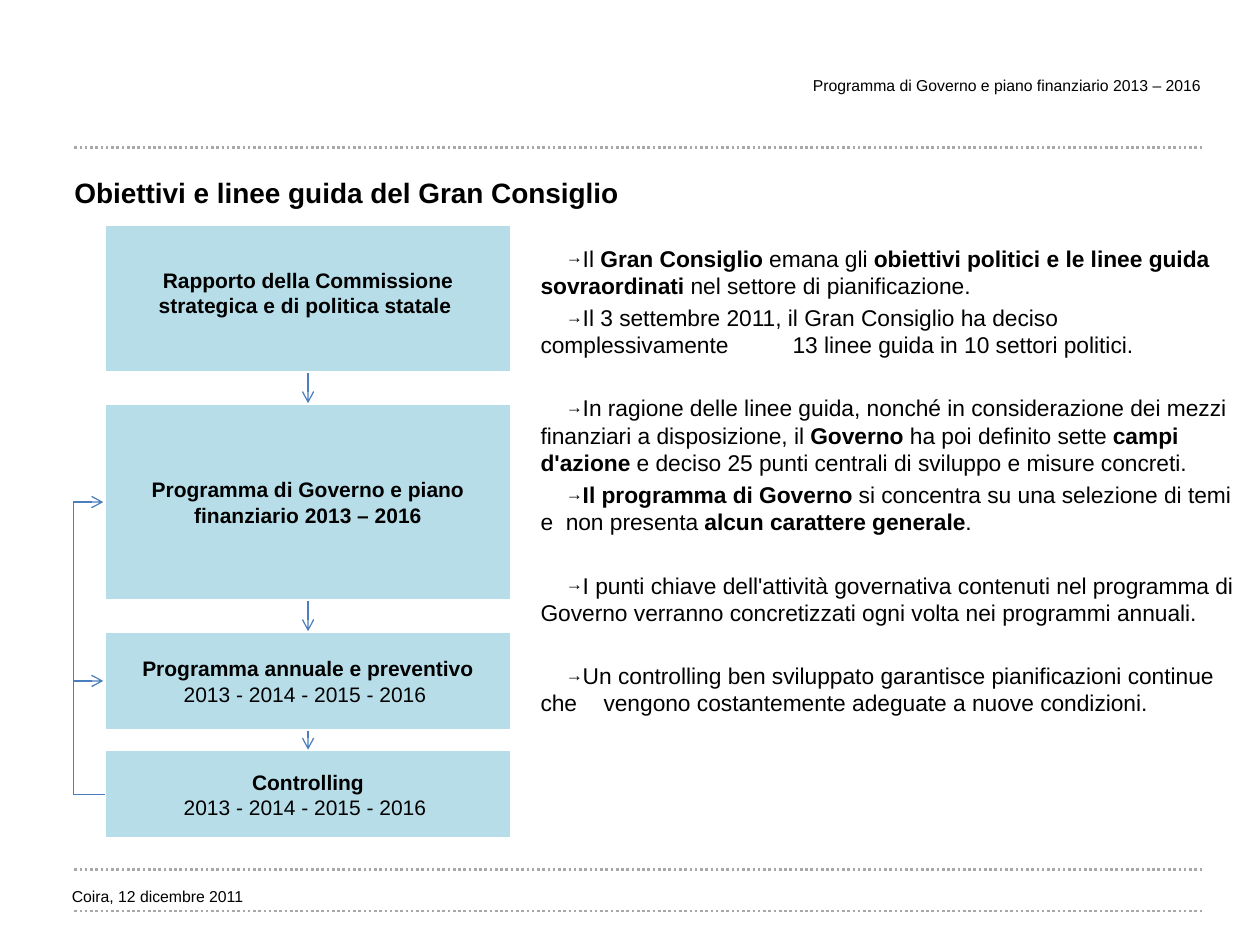
import pptx
import pptx.util
from pptx.dml.color import RGBColor
from pptx.enum.dml import MSO_LINE
from pptx.enum.shapes import MSO_CONNECTOR, MSO_SHAPE
from pptx.enum.text import MSO_ANCHOR, PP_ALIGN
from pptx.oxml.ns import qn
from lxml import etree

Pt, Inch = pptx.util.Pt, pptx.util.Inches

BLACK = RGBColor(0, 0, 0)
WHITE = RGBColor(255, 255, 255)
GREY = RGBColor(0xA7, 0xA8, 0xAA)
AQUA = RGBColor(0xB7, 0xDE, 0xE8)
BLUE = RGBColor(0x4B, 0x7E, 0xBC)

# Grid of the page and of the flow chart
LEFT, RIGHT = 0.59, 9.54
COL, WIDE = 0.83, 3.23
MID = COL + WIDE / 2
LOOP = 0.25
YEARS = "2013 - 2014 - 2015 - 2016 "
PLAN = "Programma di Governo e piano finanziario 2013 – 2016"

# Top, height, bottom inset, and lines of each step; ** marks bold
STEPS = [
    (1.78, 1.18, 0.14, ["**Rapporto della Commissione strategica e di politica statale "]),
    (3.2, 1.57, 0.05, ["**" + PLAN]),
    (5.01, 0.79, 0.05, ["**Programma annuale e preventivo", YEARS]),
    (5.95, 0.71, 0.05, ["**Controlling", YEARS]),
]

# Groups of remarks, one group beside each step
NOTES = [
    ["Il **Gran Consiglio **emana gli **obiettivi politici e le linee guida "
     "\tsovraordinati** nel settore di pianificazione.",
     "Il 3 settembre 2011, il Gran Consiglio ha deciso complessivamente "
     "\t13 linee guida in 10 settori politici."],
    ["In ragione delle linee guida, nonché in considerazione dei mezzi "
     "\tfinanziari a disposizione, il **Governo** ha poi definito sette "
     "**campi \td'azione** e deciso 25 punti centrali di sviluppo e misure concreti.",
     "**Il programma di Governo** si concentra su una selezione di temi e "
     "\tnon presenta **alcun carattere generale**."],
    ["I punti chiave dell'attività governativa contenuti nel programma di "
     "\tGoverno verranno concretizzati ogni volta nei programmi annuali."],
    ["Un controlling ben sviluppato garantisce pianificazioni continue che "
     "\tvengono costantemente adeguate a nuove condizioni."],
]


def style(obj, **vals):
    for key, val in vals.items():
        setattr(obj, key, val)


def frame(shape, **vals):
    """Set up a text frame without margins unless told otherwise."""
    base = dict(word_wrap=True, vertical_anchor=MSO_ANCHOR.TOP, margin_left=0,
                margin_right=0, margin_top=0, margin_bottom=0)
    style(shape.text_frame, **{**base, **vals})
    return shape.text_frame


def write(para, text, size, align=PP_ALIGN.LEFT):
    """Fill a paragraph; every ** switches bold on or off."""
    para.alignment = align
    for i, part in enumerate(text.split("**")):
        if part:
            run = para.add_run()
            run.text = part
            style(run.font, name="Arial", size=Pt(size), bold=i % 2 == 1)
            run.font.color.rgb = BLACK


def label(slide, box, text, size, align=PP_ALIGN.LEFT):
    shape = slide.shapes.add_textbox(*map(Inch, box))
    para = frame(shape).paragraphs[0]
    write(para, text, size, align)
    return para


def heading(slide, text):
    title = slide.shapes.title
    style(title, left=Inch(LEFT), top=Inch(1.39),
          width=Inch(RIGHT - LEFT), height=Inch(0.33))
    write(frame(title).paragraphs[0], "**" + text, 16)


def link(slide, start, end, kind=MSO_CONNECTOR.STRAIGHT, color=BLUE, width=0.75):
    line = slide.shapes.add_connector(kind, *map(Inch, start + end))
    line.line.color.rgb = color
    line.line.width = Pt(width)
    etree.SubElement(line._element.spPr, qn("a:effectLst"))
    return line


def arrow(slide, start, end, kind=MSO_CONNECTOR.STRAIGHT):
    line = link(slide, start, end, kind)
    etree.SubElement(line.line._get_or_add_ln(), qn("a:tailEnd"), type="arrow")
    return line


def rule(slide, y):
    line = link(slide, (LEFT, y), (RIGHT, y), color=GREY, width=1.5)
    line.line.dash_style = MSO_LINE.ROUND_DOT


def loop(slide, low, high):
    """Lead an arrow round the left side, back up to an earlier step."""
    step = 0.01
    line = arrow(slide, (COL, low), (COL - step, high), MSO_CONNECTOR.ELBOW)
    guides = line._element.spPr.find(qn("a:prstGeom")).get_or_add_avLst()
    share = round(LOOP / step * 100000)
    etree.SubElement(guides, qn("a:gd"), name="adj1", fmla=f"val {share}")


def card(slide, top, high, base, lines):
    box = slide.shapes.add_shape(MSO_SHAPE.RECTANGLE,
                                 *map(Inch, (COL, top, WIDE, high)))
    box.shadow.inherit = False
    box.fill.solid()
    box.fill.fore_color.rgb = AQUA
    box.line.color.rgb = WHITE
    box.line.width = Pt(2)
    text = frame(box, vertical_anchor=MSO_ANCHOR.MIDDLE, margin_left=Inch(0.1),
                 margin_right=Inch(0.1), margin_top=Inch(0.05),
                 margin_bottom=Inch(base))
    for i, row in enumerate(lines):
        para = text.add_paragraph() if i else text.paragraphs[0]
        write(para, row, 12, PP_ALIGN.CENTER)


def bullet(para):
    props = para._p.get_or_add_pPr()
    props.set("marL", "0")
    props.set("indent", str(Inch(0.2)))
    etree.SubElement(props, qn("a:buSzPct"), val="75000")
    etree.SubElement(props, qn("a:buFont"), typeface="Arial")
    etree.SubElement(props, qn("a:buChar"), char="→")
    tabs = etree.SubElement(props, qn("a:tabLst"))
    etree.SubElement(tabs, qn("a:tab"), pos=str(Inch(0.2)), algn="l")


def remarks(slide):
    shape = slide.shapes.add_textbox(*map(Inch, (4.29, 1.94, 5.59, 4.8)))
    text = frame(shape)
    for g, group in enumerate(NOTES):
        for i, note in enumerate(group):
            first = g == i == 0
            para = text.paragraphs[0] if first else text.add_paragraph()
            bullet(para)
            if not first:
                para.space_before = Pt(2.6 if i else 20.5)
            write(para, note, 13)


def main():
    deck = pptx.Presentation()
    style(deck, slide_width=Inch(10), slide_height=Inch(7.5))
    slide = deck.slides.add_slide(deck.slide_layouts[5])

    # Page frame
    for y in (1.17, 6.9, 7.23):
        rule(slide, y)
    label(slide, (5, 0.6, 4.53, 0.44), PLAN, 9, PP_ALIGN.RIGHT)
    heading(slide, "Obiettivi e linee guida del Gran Consiglio")
    date = label(slide, (0.57, 6.96, 1.84, 0.24), "Coira, 12 dicembre 2011", 9)
    date.line_spacing = 1.5

    # Remarks on the right
    remarks(slide)

    # Flow chart on the left
    for step in STEPS:
        card(slide, *step)
    for upper, lower in zip(STEPS, STEPS[1:]):
        arrow(slide, (MID, upper[0] + upper[1]), (MID, lower[0]))
    mids = [top + high / 2 for top, high, *_ in STEPS]
    for high in (mids[2], mids[1]):
        loop(slide, mids[3], high)

    deck.save("out.pptx")


if __name__ == "__main__":
    main()
